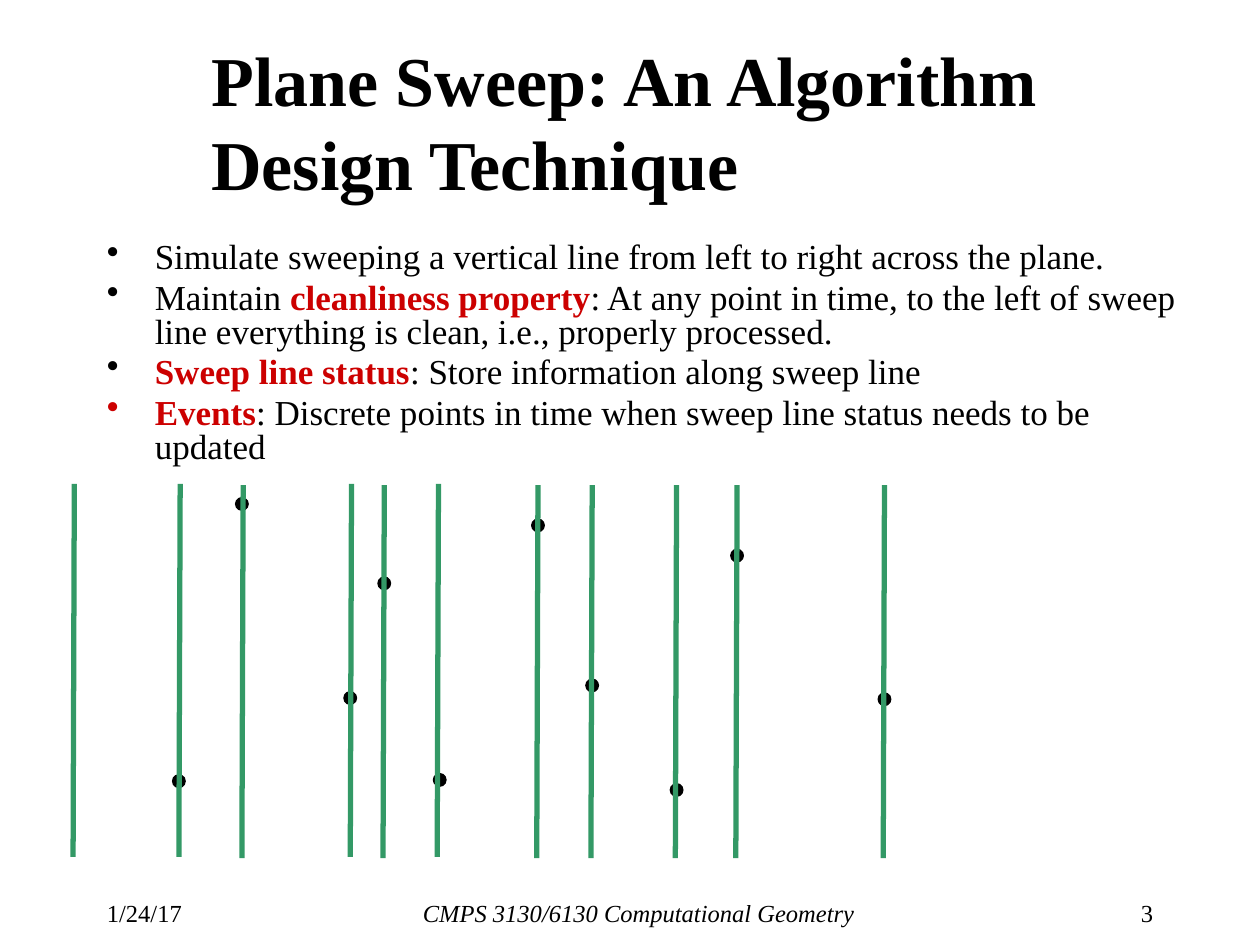
from lxml import etree
from pptx import Presentation
from pptx.dml.color import RGBColor
from pptx.enum.shapes import MSO_CONNECTOR, MSO_SHAPE
from pptx.enum.text import MSO_ANCHOR, PP_ALIGN
from pptx.oxml.ns import qn
from pptx.util import Inches, Pt

FONT = "Times New Roman"
BLACK, RED, GREEN = "000000", "CC0000", "339966"

# Each bullet: its dot colour and its (text, is key term) spans.
BULLETS = [
    (BLACK, [("Simulate sweeping a vertical line from left to right across the plane.", False)]),
    (BLACK, [("Maintain ", False), ("cleanliness property", True),
             (": At any point in time, to the left of sweep line everything is clean, "
              "i.e., properly processed.", False)]),
    (BLACK, [("Sweep line status", True), (": Store information along sweep line", False)]),
    (RED, [("Events", True),
           (": Discrete points in time when sweep line status needs to be updated", False)]),
]

# Left and top of each event point, relative to the sweep area.
DOT_SIZE = 0.1
EVENT_POINTS = [(2.86, 2.3), (3.64, 0.28), (4.07, 1.55), (4.74, 2.38), (6.39, 1.66),
                (5.22, 0.52), (2.42, 0.74), (2.15, 1.65), (1.29, 0.11), (0.79, 2.31)]

# Top end of each sweep line, relative to the sweep area.
LINE_LEAN = 0.01
SWEEP_LINES = [(0.01, 0), (0.85, 0), (1.35, 0.01), (2.21, 0), (2.47, 0.01), (2.9, 0),
               (3.69, 0.01), (4.12, 0.01), (4.79, 0.01), (5.27, 0.01), (6.44, 0.01)]


def color(hex_text):
    return RGBColor.from_string(hex_text)


def set_font(font, size, bold=False, italic=False):
    font.name, font.size = FONT, Pt(size)
    font.bold, font.italic = bold, italic
    font.color.rgb = color(BLACK)


def add_text_frame(page, left, top, width, height):
    box = page.shapes.add_textbox(Inches(left), Inches(top), Inches(width), Inches(height))
    box.text_frame.word_wrap = True
    return box.text_frame


def add_title(page, left, top, width, height):
    frame = add_text_frame(page, left, top, width, height)
    frame.vertical_anchor = MSO_ANCHOR.MIDDLE
    para = frame.paragraphs[0]
    para.text = "Plane Sweep: An Algorithm Design Technique"
    set_font(para.font, 40, bold=True)


def add_bullet_mark(para, hex_text):
    props = para._p.get_or_add_pPr()
    indent = Inches(0.38)
    props.set("marL", str(indent))
    props.set("indent", str(-indent))
    dot_color = etree.SubElement(props, qn("a:buClr"))
    etree.SubElement(dot_color, qn("a:srgbClr"), val=hex_text)
    etree.SubElement(props, qn("a:buChar"), char="•")


def add_bullets(page, left, top, width, height):
    frame = add_text_frame(page, left, top, width, height)
    for index, (dot_color, spans) in enumerate(BULLETS):
        para = frame.add_paragraph() if index else frame.paragraphs[0]
        add_bullet_mark(para, dot_color)
        para.line_spacing = 0.8
        para.space_before = Pt(4)
        set_font(para.font, 20)
        for text, is_key_term in spans:
            span = para.add_run()
            span.text = text
            if is_key_term:
                span.font.bold = True
                span.font.color.rgb = color(RED)


def add_event_point(page, left, top):
    dot = page.shapes.add_shape(MSO_SHAPE.OVAL, Inches(left), Inches(top),
                                Inches(DOT_SIZE), Inches(DOT_SIZE))
    dot.shadow.inherit = False
    dot.fill.solid()
    dot.fill.fore_color.rgb = color(BLACK)
    dot.line.color.rgb = color(BLACK)
    dot.line.width = Pt(0.75)


def add_sweep_line(page, left, top, height):
    line = page.shapes.add_connector(MSO_CONNECTOR.STRAIGHT, Inches(left), Inches(top),
                                     Inches(left - LINE_LEAN), Inches(top + height))
    line.line.color.rgb = color(GREEN)
    line.line.width = Pt(3)
    etree.SubElement(line._element.spPr, qn("a:effectLst"))


def add_sweep(page, left, top, line_height):
    for x, y in EVENT_POINTS:
        add_event_point(page, left + x, top + y)
    for x, y in SWEEP_LINES:
        add_sweep_line(page, left + x, top + y, line_height)


def add_footer(page, top, height):
    parts = [
        (0.75, 0.95, "1/24/17", PP_ALIGN.LEFT, False),
        (1.9, 6.34, "CMPS 3130/6130 Computational Geometry", PP_ALIGN.CENTER, True),
        (8.43, 0.82, "3", PP_ALIGN.RIGHT, False),
    ]
    for left, width, text, alignment, italic in parts:
        para = add_text_frame(page, left, top, width, height).paragraphs[0]
        para.text = text
        para.alignment = alignment
        set_font(para.font, 14, italic=italic)


def main():
    deck = Presentation()
    deck.slide_width, deck.slide_height = Inches(10), Inches(7.5)
    page = deck.slides.add_slide(deck.slide_layouts[6])
    add_footer(page, 7.08, 0.25)
    add_title(page, 1.58, 0.33, 8.25, 1.25)
    add_bullets(page, 0.75, 1.88, 8.72, 2.62)
    add_sweep(page, 0.58, 3.84, 2.96)
    deck.save("out.pptx")


if __name__ == "__main__":
    main()
